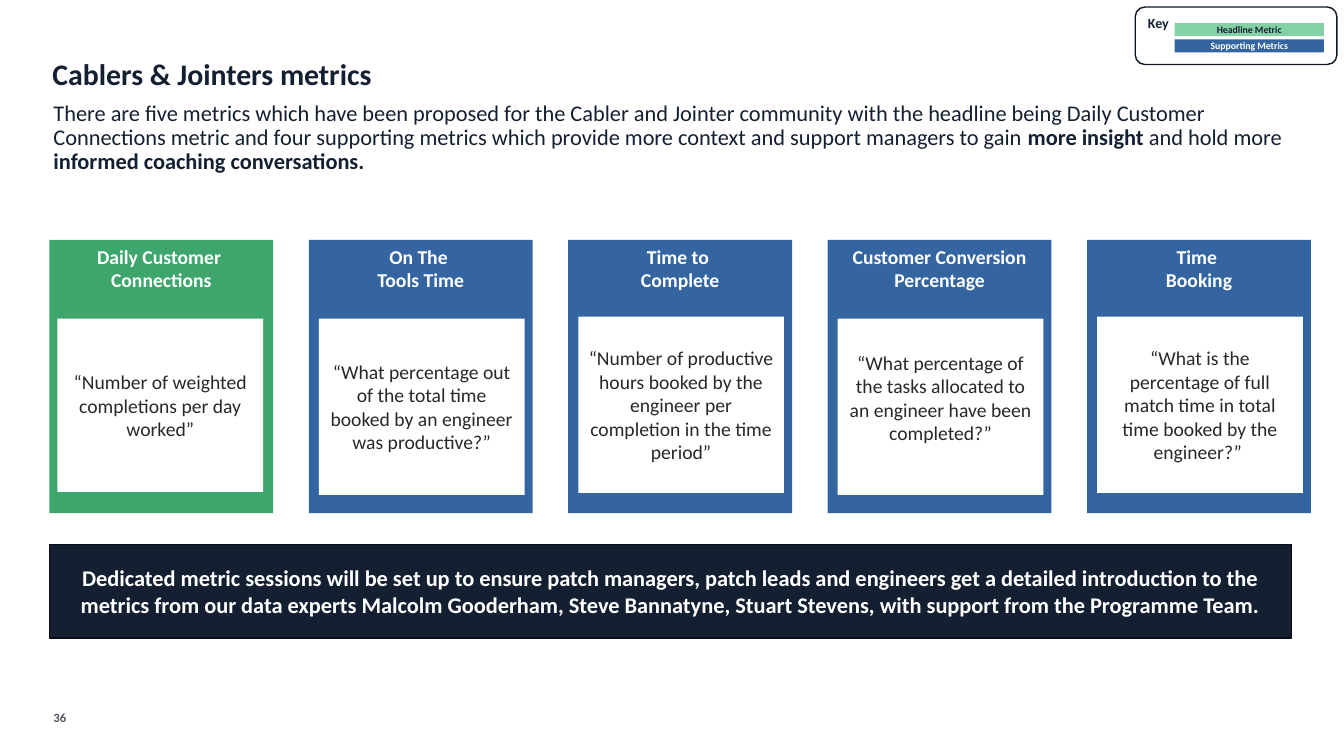
from pptx import Presentation
from pptx import util as u
from pptx.dml.color import RGBColor
from pptx.enum import shapes, text

FONT = "Calibri"
NAVY, BLUE, GREEN, MINT = "142032", "3465A0", "3EA66C", "84D1A6"
WHITE, CHARCOAL, GREY = "FFFFFF", "282828", "51565D"
LEFT, TOP, PITCH = 0.49, 2.38, 2.573
CARD_WIDTH, CARD_HEIGHT = 2.22, 2.71
PANEL_WIDTH, PANEL_HEIGHT = 2.04, 1.75
PADDING = (0.1, 0.05, 0.1, 0.05)

# heading lines, question, panel offset across and down
METRICS = [
    (["Daily Customer ", "Connections"],
     "“Number of weighted completions per day worked”", 0.08, 0.78),
    (["On The ", "Tools Time"],
     "“What percentage out of the total time booked by an engineer was productive?”", 0.1, 0.78),
    (["Time to ", "Complete"],
     "“Number of productive hours booked by the engineer per completion in the time period”",
     0.1, 0.76),
    (["Customer Conversion Percentage"],
     "“What percentage of the tasks allocated to an engineer have been completed?”", 0.1, 0.78),
    (["Time ", "Booking"],
     "“What is the percentage of full match time in total time booked by the engineer?” ",
     0.1, 0.76),
]
INTRODUCTION = [
    ("There are five metrics which have been proposed for the Cabler and Jointer community with "
     "the headline being Daily Customer Connections metric and four supporting metrics which "
     "provide more context and support managers to gain ", False),
    ("more insight ", True),
    ("and hold more ", False),
    ("informed coaching conversations.", True),
]
SESSIONS = ("Dedicated metric sessions will be set up to ensure patch managers, patch leads and "
            "engineers get a detailed introduction to the metrics from our data experts Malcolm "
            "Gooderham, Steve Bannatyne, Stuart Stevens, with support from the Programme Team.")


def colour(value):
    return RGBColor.from_string(value)


def inches(*lengths):
    return [u.Inches(length) for length in lengths]


def format_run(run, size, ink, bold):
    run.font.name, run.font.size, run.font.bold = FONT, u.Pt(size), bold
    run.font.color.rgb = colour(ink)


def prepare_frame(frame, insets=(0, 0, 0, 0), middle=False, wrap=True):
    frame.word_wrap = wrap
    frame.auto_size = text.MSO_AUTO_SIZE.NONE
    frame.vertical_anchor = text.MSO_ANCHOR.MIDDLE if middle else text.MSO_ANCHOR.TOP
    (frame.margin_left, frame.margin_top,
     frame.margin_right, frame.margin_bottom) = inches(*insets)


def write(frame, lines, size, ink, bold=False, align=text.PP_ALIGN.LEFT):
    frame.text = "\n".join(lines)
    for paragraph in frame.paragraphs:
        paragraph.alignment = align
        for run in paragraph.runs:
            format_run(run, size, ink, bold)


def add_box(slide, place, lines, size, ink, fill=None, line=None, bold=True,
            insets=PADDING, middle=True, align=text.PP_ALIGN.CENTER,
            outline=shapes.MSO_SHAPE.RECTANGLE):
    shape = slide.shapes.add_shape(outline, *inches(*place))
    shape.shadow.inherit = False
    if fill:
        shape.fill.solid()
        shape.fill.fore_color.rgb = colour(fill)
    else:
        shape.fill.background()
    if line:
        shape.line.color.rgb = colour(line)
        shape.line.width = u.Pt(1)
    else:
        shape.line.fill.background()
    prepare_frame(shape.text_frame, insets, middle)
    write(shape.text_frame, lines, size, ink, bold, align)


def add_title(slide):
    title = slide.shapes.title
    title.left, title.top, title.width, title.height = inches(0.52, 0.59, 4.83, 0.42)
    prepare_frame(title.text_frame)
    write(title.text_frame, ["Cablers & Jointers metrics"], 21.3, NAVY, True)
    title.text_frame.paragraphs[0].line_spacing = 0.9


def add_introduction(slide):
    frame = slide.shapes.add_textbox(*inches(0.53, 1.01, 12.48, 0.64)).text_frame
    prepare_frame(frame)
    paragraph = frame.paragraphs[0]
    paragraph.line_spacing = 0.9
    for words, bold in INTRODUCTION:
        run = paragraph.add_run()
        run.text = words
        format_run(run, 16, NAVY, bold)


def add_metric(slide, column, heading, question, across, down):
    left = LEFT + column * PITCH
    headline = column == 0
    add_box(slide, (left, TOP, CARD_WIDTH, CARD_HEIGHT), heading, 14, WHITE,
            fill=GREEN if headline else BLUE, middle=False)
    # The conversion question sits slightly above the middle of its panel
    insets = (0.1, 0.05, 0.1, 0.23) if column == 3 else PADDING
    height = 1.72 if headline else PANEL_HEIGHT
    add_box(slide, (left + across, TOP + down, PANEL_WIDTH, height), [question], 14, CHARCOAL,
            fill=WHITE, bold=False, insets=insets)


def add_key(slide):
    add_box(slide, (11.26, 0.07, 2, 0.57), ["Key"], 10, NAVY, line="0F1825", middle=False,
            align=text.PP_ALIGN.LEFT, outline=shapes.MSO_SHAPE.ROUNDED_RECTANGLE)
    entries = [("Headline Metric", MINT, NAVY), ("Supporting Metrics", BLUE, WHITE)]
    for row, (label, fill, ink) in enumerate(entries):
        add_box(slide, (11.65, 0.23 + row * 0.16, 1.48, 0.13), [label], 7, ink, fill=fill,
                insets=(0, 0.05, 0, 0.05))


def add_page_number(slide):
    frame = slide.shapes.add_textbox(*inches(0.53, 7.04, 0.17, 0.15)).text_frame
    prepare_frame(frame, wrap=False)
    write(frame, ["36"], 9, GREY, True)


def main():
    presentation = Presentation()
    presentation.slide_width, presentation.slide_height = inches(13.33, 7.5)
    slide = presentation.slides.add_slide(presentation.slide_layouts[5])
    add_page_number(slide)
    add_title(slide)
    add_introduction(slide)
    for column, metric in enumerate(METRICS):
        add_metric(slide, column, *metric)
    add_key(slide)
    add_box(slide, (LEFT, 5.4, 12.32, 0.93), [SESSIONS], 16, WHITE, fill=NAVY, line="090E16")
    presentation.save("out.pptx")


if __name__ == "__main__":
    main()
